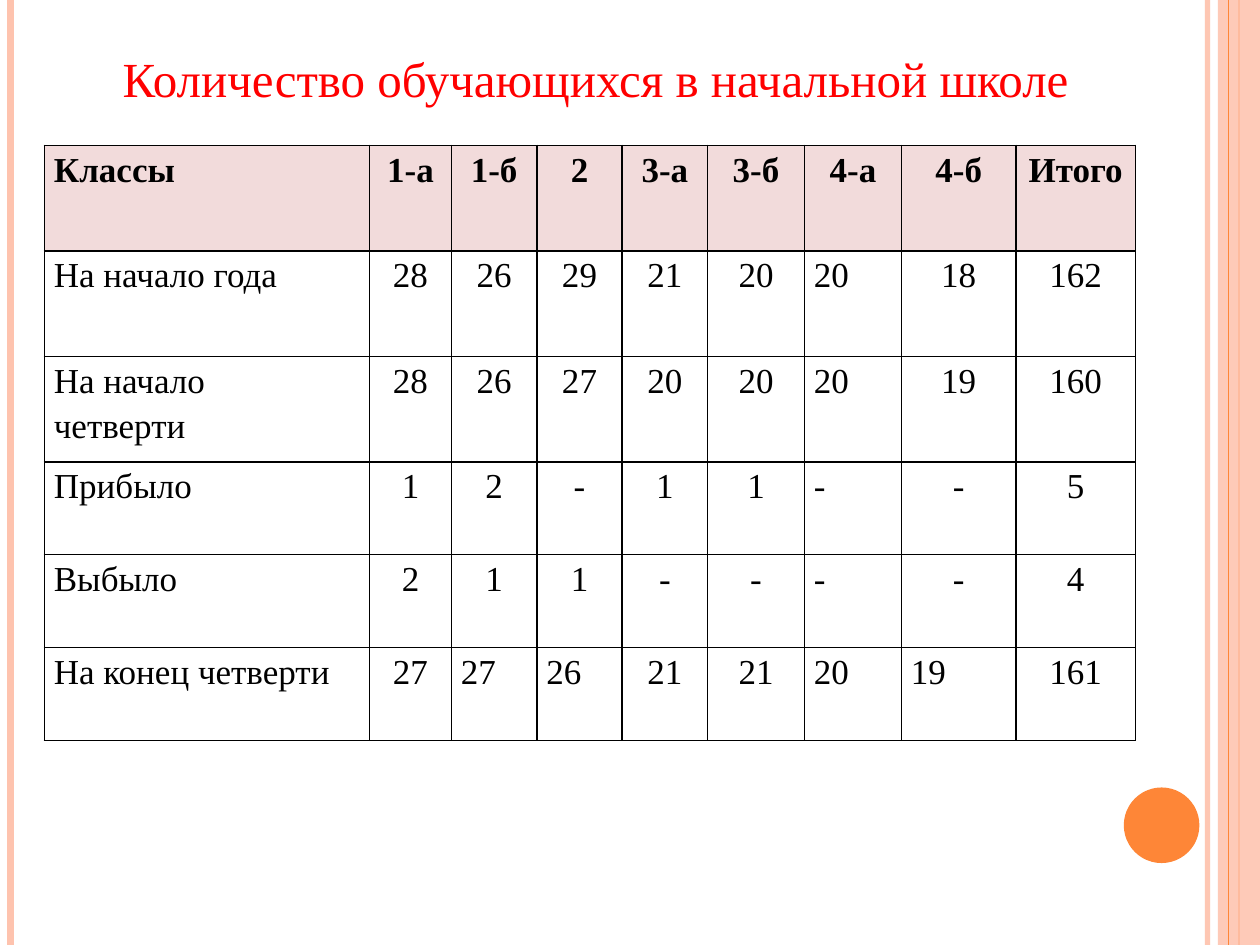
"""Build the slide with primary school pupil numbers by class."""
import pptx
import pptx.dml.color
import pptx.enum.shapes
import pptx.enum.text
import pptx.oxml.ns
import pptx.util
from lxml import etree

Pt = pptx.util.Pt
RGBColor = pptx.dml.color.RGBColor
Shape = pptx.enum.shapes.MSO_SHAPE
Align = pptx.enum.text.PP_ALIGN
qn = pptx.oxml.ns.qn

PEACH = RGBColor(0xFE, 0xC3, 0xAE)
ORANGE = RGBColor(0xFE, 0x86, 0x37)
RED = RGBColor(0xFF, 0x00, 0x00)
BLACK = RGBColor(0x00, 0x00, 0x00)
HEADER_PINK = RGBColor(0xF2, 0xDB, 0xDB)
FONT = "Times New Roman"

WIDTH, HEIGHT = 720, 540
TITLE = "Количество обучающихся в начальной школе"
ROWS = [
    ["Классы", "1-а", "1-б", "2", "3-а", "3-б", "4-а", "4-б", "Итого"],
    ["На начало года", "28", "26", "29", "21", "20", "20", "18", "162"],
    ["На начало\nчетверти", "28", "26", "27", "20", "20", "20", "19", "160"],
    ["Прибыло", "1", "2", "-", "1", "1", "-", "-", "5"],
    ["Выбыло", "2", "1", "1", "-", "-", "-", "-", "4"],
    ["На конец четверти", "27", "27", "26", "21", "21", "20", "19", "161"],
]
COLUMN_WIDTHS = [185.8, 46.8, 48.8, 48.8, 48.8, 55.4, 55.4, 65.5, 68.2]
ROW_HEIGHTS = [60.3] * 3 + [53.1] * 3
TABLE_LEFT, TABLE_TOP = 25.4, 83
LAST_ROW = len(ROWS) - 1
LEFT_ALIGNED = {(row, 0) for row in range(len(ROWS))}
LEFT_ALIGNED |= {(row, 6) for row in range(1, len(ROWS))}
LEFT_ALIGNED |= {(LAST_ROW, column) for column in (2, 3, 7)}

LINES_BEHIND = [(690, PEACH, 3, 93), (6, PEACH, 4.5, 100), (708, ORANGE, 1.5, 100)]
LINE_IN_FRONT = (702, ORANGE, 0.75, 100)
BAND = (Shape.RECTANGLE, 696, 0, 24, HEIGHT, PEACH, 87)
CIRCLE = (Shape.OVAL, 642.2, 450, 43.2, 43.2, ORANGE, 100)


def set_opacity(element, percent):
    if percent < 100:
        color = next(element.iter(qn("a:srgbClr")))
        etree.SubElement(color, qn("a:alpha"), val=str(percent * 1000))


def add_vertical_line(slide, x, color, weight, opacity):
    line = slide.shapes.add_connector(
        pptx.enum.shapes.MSO_CONNECTOR.STRAIGHT, Pt(x), 0, Pt(x), Pt(HEIGHT))
    line.line.color.rgb = color
    line.line.width = Pt(weight)
    properties = line.element.spPr
    set_opacity(properties, opacity)
    etree.SubElement(properties, qn("a:effectLst"))


def add_decoration(slide, kind, left, top, width, height, color, opacity):
    shape = slide.shapes.add_shape(kind, Pt(left), Pt(top), Pt(width), Pt(height))
    shape.shadow.inherit = False
    shape.fill.solid()
    shape.fill.fore_color.rgb = color
    shape.line.fill.background()
    set_opacity(shape.element.spPr, opacity)


def add_run(paragraph, text, size, color, bold=False):
    run = paragraph.add_run()
    run.text = text
    run.font.name = FONT
    run.font.size = Pt(size)
    run.font.bold = bold
    run.font.color.rgb = color


def add_title(slide):
    box = slide.shapes.add_textbox(Pt(59.8), Pt(23.8), Pt(560.9), Pt(41))
    frame = box.text_frame
    frame.word_wrap = False
    frame.vertical_anchor = pptx.enum.text.MSO_ANCHOR.MIDDLE
    frame.paragraphs[0].alignment = Align.CENTER
    add_run(frame.paragraphs[0], TITLE, 28, RED)


def add_borders(cell):
    properties = cell._tc.get_or_add_tcPr()
    for side in ("lnL", "lnR", "lnT", "lnB"):
        border = etree.SubElement(properties, qn(f"a:{side}"), w=str(Pt(1)))
        fill = etree.SubElement(border, qn("a:solidFill"))
        etree.SubElement(fill, qn("a:srgbClr"), val=str(BLACK))


def fill_cell(cell, text, alignment, is_header):
    add_borders(cell)
    if is_header:
        cell.fill.solid()
        cell.fill.fore_color.rgb = HEADER_PINK
    else:
        cell.fill.background()
    cell.margin_left = cell.margin_right = Pt(5.4)
    cell.margin_top = cell.margin_bottom = 0
    frame = cell.text_frame
    for index, line in enumerate(text.split("\n")):
        paragraph = frame.add_paragraph() if index else frame.paragraphs[0]
        paragraph.alignment = alignment
        paragraph.line_spacing = 1.15
        add_run(paragraph, line, 20, BLACK, is_header)


def add_pupil_table(slide):
    table = slide.shapes.add_table(
        len(ROWS), len(COLUMN_WIDTHS), Pt(TABLE_LEFT), Pt(TABLE_TOP),
        Pt(sum(COLUMN_WIDTHS)), Pt(sum(ROW_HEIGHTS))).table
    table.first_row = table.horz_banding = False
    for column, width in zip(table.columns, COLUMN_WIDTHS):
        column.width = Pt(width)
    for row, height in zip(table.rows, ROW_HEIGHTS):
        row.height = Pt(height)
    for row, values in enumerate(ROWS):
        for column, text in enumerate(values):
            alignment = Align.LEFT if (row, column) in LEFT_ALIGNED else Align.CENTER
            fill_cell(table.cell(row, column), text, alignment, row == 0)


def main():
    presentation = pptx.Presentation()
    presentation.slide_width, presentation.slide_height = Pt(WIDTH), Pt(HEIGHT)
    slide = presentation.slides.add_slide(presentation.slide_layouts[6])
    for line in LINES_BEHIND:
        add_vertical_line(slide, *line)
    add_decoration(slide, *BAND)
    add_vertical_line(slide, *LINE_IN_FRONT)
    add_decoration(slide, *CIRCLE)
    add_title(slide)
    add_pupil_table(slide)
    presentation.save("out.pptx")


if __name__ == "__main__":
    main()
